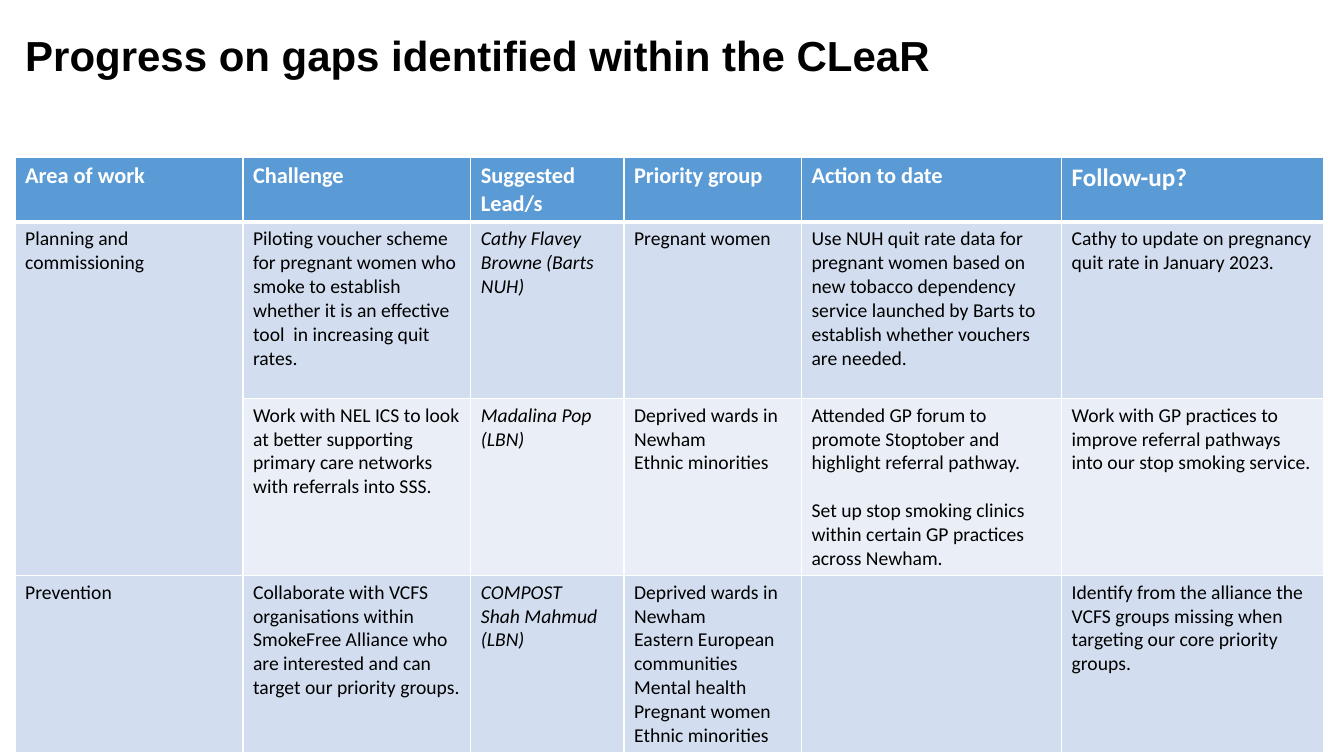
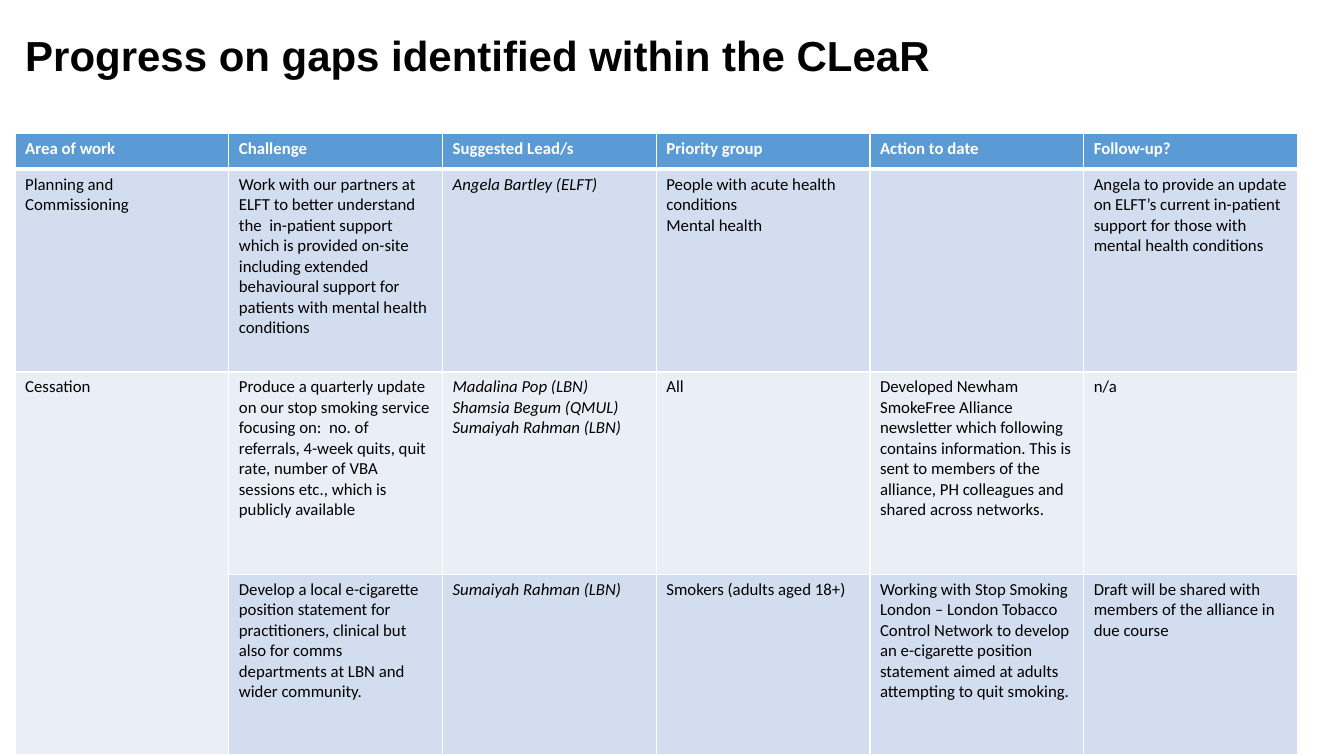
from lxml.etree import SubElement
from pptx import Presentation
from pptx.dml.color import RGBColor
from pptx.enum.text import MSO_ANCHOR, MSO_AUTO_SIZE, PP_ALIGN
from pptx.oxml.ns import qn
from pptx.util import Inches, Pt

WHITE, BLACK, HEADER = "FFFFFF", "000000", "5B9BD5"
BANDS = ["D2DEEF", "EAEFF7"]
LEFT = 0.15
TITLE = "Progress on gaps identified within the CLeaR"
HEADINGS = ["Area of work", "Challenge", "Suggested Lead/s",
            "Priority group", "Action to date", "Follow-up?"]
LEAD_COLUMN = HEADINGS.index("Suggested Lead/s")


def write(frame, text, size, font="Calibri", color=BLACK, bold=False,
          italic=False, gap=0, spacing=1.0):
    for index, line in enumerate(text.split("\n")):
        para = frame.add_paragraph() if index else frame.paragraphs[0]
        para.alignment = PP_ALIGN.LEFT
        para.line_spacing = spacing
        if index and gap:
            para.space_before = Pt(gap)
        span = para.add_run()
        span.text = line
        span.font.name, span.font.size = font, Pt(size)
        span.font.bold, span.font.italic = bold, italic
        span.font.color.rgb = RGBColor.from_string(color)


def paint(cell, fill, bottom=1):
    properties = cell._tc.get_or_add_tcPr()
    for side, width in (("L", 1), ("R", 1), ("T", 1), ("B", bottom)):
        line = SubElement(properties, qn(f"a:ln{side}"), w=str(Pt(width)))
        color = SubElement(line, qn("a:solidFill"))
        SubElement(color, qn("a:srgbClr"), val=WHITE)
    cell.fill.solid()
    cell.fill.fore_color.rgb = RGBColor.from_string(fill)


pages = [
    {
        "top": 1.56,
        "columns": [2.26, 2.26, 1.52, 1.76, 2.58, 2.6],
        "heights": [0.64, 1.75, 1.75, 1.75],
        "heading_sizes": [16] * 5 + [18],
        "size": 14,
        "merge": (1, 2),
        "rows": [
            ["Planning and commissioning",
             "Piloting voucher scheme for pregnant women who smoke to establish "
             "whether it is an effective tool  in increasing quit rates.",
             "Cathy Flavey Browne (Barts NUH)",
             "Pregnant women",
             "Use NUH quit rate data for pregnant women based on new tobacco "
             "dependency service launched by Barts to establish whether "
             "vouchers are needed.",
             "Cathy to update on pregnancy quit rate in January 2023."],
            ["",
             "Work with NEL ICS to look at better supporting primary care "
             "networks with referrals into SSS.",
             "Madalina Pop (LBN)",
             "Deprived wards in Newham\nEthnic minorities",
             "Attended GP forum to promote Stoptober and highlight referral "
             "pathway.\nSet up stop smoking clinics within certain GP "
             "practices across Newham.",
             "Work with GP practices to improve referral pathways into our "
             "stop smoking service."],
            ["Prevention",
             "Collaborate with VCFS organisations within SmokeFree Alliance who "
             "are interested and can target our priority groups.",
             "COMPOST\nShah Mahmud (LBN)",
             "Deprived wards in Newham\nEastern European communities\n"
             "Mental health\nPregnant women\nEthnic minorities",
             "",
             "Identify from the alliance the VCFS groups missing when targeting "
             "our core priority groups."],
        ],
    },
    {
        "top": 1.32,
        "columns": [2.12] * 6,
        "heights": [0.36, 2.01, 2.01, 1.79],
        "heading_sizes": [12] * 6,
        "size": 12,
        "merge": (2, 3),
        "rows": [
            ["Planning and Commissioning",
             "Work with our partners at ELFT to better understand the  "
             "in-patient support which is provided on-site including extended "
             "behavioural support for patients with mental health conditions",
             "Angela Bartley (ELFT)",
             "People with acute health conditions\nMental health",
             "",
             "Angela to provide an update on ELFT’s current in-patient support "
             "for those with mental health conditions"],
            ["Cessation",
             "Produce a quarterly update on our stop smoking service focusing "
             "on:  no. of referrals, 4-week quits, quit rate, number of VBA "
             "sessions etc., which is publicly available",
             "Madalina Pop (LBN)\nShamsia Begum (QMUL)\nSumaiyah Rahman (LBN)",
             "All",
             "Developed Newham SmokeFree Alliance newsletter which following "
             "contains information. This is sent to members of the alliance, "
             "PH colleagues and shared across networks.",
             "n/a"],
            ["",
             "Develop a local e-cigarette position statement for practitioners, "
             "clinical but also for comms departments at LBN and wider "
             "community.",
             "Sumaiyah Rahman (LBN)",
             "Smokers (adults aged 18+)",
             "Working with Stop Smoking London – London Tobacco Control Network "
             "to develop an e-cigarette position statement aimed at adults "
             "attempting to quit smoking.",
             "Draft will be shared with members of the alliance in due course"],
        ],
    },
]

deck = Presentation()
deck.slide_width, deck.slide_height = Inches(13.33), Inches(7.5)
title_only = deck.slide_layouts[5]

for content in pages:
    page = deck.slides.add_slide(title_only)
    title = page.shapes.title
    title.left, title.top = Inches(LEFT), Inches(0.04)
    title.width, title.height = Inches(10), Inches(0.81)
    title.text_frame.auto_size = MSO_AUTO_SIZE.NONE
    title.text_frame.vertical_anchor = MSO_ANCHOR.BOTTOM
    write(title.text_frame, TITLE, 30, font="Arial", bold=True, spacing=0.9)

    columns, heights = content["columns"], content["heights"]
    table = page.shapes.add_table(
        len(heights), len(columns), Inches(LEFT), Inches(content["top"]),
        Inches(sum(columns)), Inches(sum(heights))).table
    for column, width in zip(table.columns, columns):
        column.width = Inches(width)
    for row, height in zip(table.rows, heights):
        row.height = Inches(height)

    for index, (heading, size) in enumerate(zip(HEADINGS, content["heading_sizes"])):
        cell = table.cell(0, index)
        paint(cell, HEADER, bottom=3)
        write(cell.text_frame, heading, size, color=WHITE, bold=True)

    for row_index, texts in enumerate(content["rows"], 1):
        for index, text in enumerate(texts):
            cell = table.cell(row_index, index)
            paint(cell, BANDS[(row_index - 1) % 2])
            if text:
                write(cell.text_frame, text, content["size"],
                      italic=index == LEAD_COLUMN,
                      gap=17 if HEADINGS[index] == "Action to date" else 0)

    first, last = content["merge"]
    table.cell(first, 0).merge(table.cell(last, 0))

deck.save("out.pptx")
